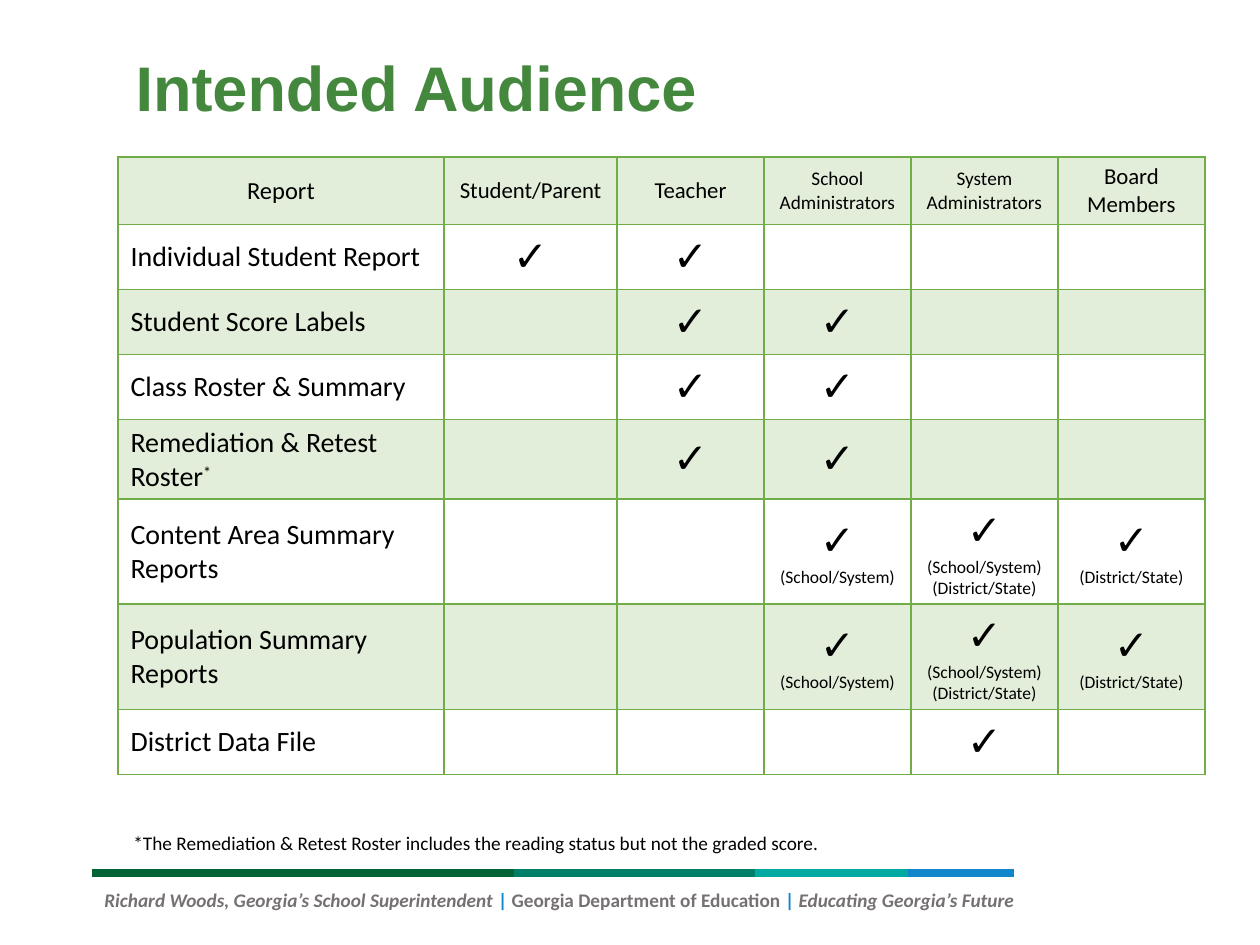
from dataclasses import dataclass

from lxml import etree
from pptx import Presentation
from pptx.dml.color import RGBColor
from pptx.enum.shapes import MSO_SHAPE
from pptx.enum.text import MSO_ANCHOR, MSO_AUTO_SIZE, PP_ALIGN
from pptx.oxml.ns import qn
from pptx.util import Pt

RECTANGLE = MSO_SHAPE.RECTANGLE
MIDDLE = MSO_ANCHOR.MIDDLE
GROW = MSO_AUTO_SIZE.SHAPE_TO_FIT_TEXT
LEFT, CENTER = PP_ALIGN.LEFT, PP_ALIGN.CENTER
EMU_PER_PX = 914400 / 126


@dataclass(frozen=True)
class Theme:
    title_font: str = "Arial"
    body_font: str = "Calibri"
    title_color: str = "44883E"
    text_color: str = "000000"
    grid_color: str = "70AD47"
    footer_color: str = "767171"
    divider_color: str = "1186CA"
    band_opacity: int = 20
    title_size: int = 36
    report_size: int = 16
    check_size: int = 24
    scope_size: int = 10
    small_size: int = 11


THEME = Theme()

BARS = [(422, "006436"), (241, "007E67"), (153, "00A9A1"), (106, "1186CA")]
FOOTER = [
    ("Richard Woods, Georgia’s School Superintendent ", THEME.footer_color, True),
    ("|", THEME.divider_color, False),
    (" Georgia Department of Education ", THEME.footer_color, False),
    ("| ", THEME.divider_color, False),
    ("Educating Georgia’s Future", THEME.footer_color, True),
]
HEADERS = [
    ("Report", 14), ("Student/Parent", 13), ("Teacher", 13),
    ("School Administrators", 11), ("System Administrators", 11),
    ("Board Members", 13),
]
SCHOOL, DISTRICT = "(School/System)", "(District/State)"
SUMMARY_AUDIENCE = {3: [SCHOOL], 4: [SCHOOL, DISTRICT], 5: [DISTRICT]}
# Each report maps its checked columns to the scopes listed under the check.
REPORTS = [
    ("Individual Student Report", {1: [], 2: []}),
    ("Student Score Labels", {2: [], 3: []}),
    ("Class Roster & Summary", {2: [], 3: []}),
    ("Remediation & Retest Roster*", {2: [], 3: []}),
    ("Content Area Summary Reports", SUMMARY_AUDIENCE),
    ("Population Summary Reports", SUMMARY_AUDIENCE),
    ("District Data File", {4: []}),
]
COLUMN_WIDTHS = [326, 173, 147, 147, 147, 147]
HEADER_HEIGHT, REPORT_HEIGHT = 47, 65


def px(length):
    return round(length * EMU_PER_PX)


def emu_box(box):
    return [px(length) for length in box]


def add_span(para, text, size, color=THEME.text_color, name=THEME.body_font, **styles):
    span = para.add_run()
    span.text = text
    for key, value in {"size": Pt(size), "name": name, **styles}.items():
        setattr(span.font, key, value)
    span.font.color.rgb = RGBColor.from_string(color)
    return span


def add_title(page, box):
    title = page.shapes.title
    title.left, title.top, title.width, title.height = emu_box(box)
    title.text_frame.vertical_anchor = MIDDLE
    para = title.text_frame.paragraphs[0]
    para.alignment, para.line_spacing = LEFT, 0.9
    add_span(para, "Intended Audience", THEME.title_size, THEME.title_color,
             THEME.title_font, bold=True)


def add_text_box(page, box):
    """Add a wrapping text box and return its first paragraph."""
    frame = page.shapes.add_textbox(*emu_box(box)).text_frame
    frame.word_wrap = True
    frame.auto_size = GROW
    return frame.paragraphs[0]


def add_footer(page, box):
    left, top, width, height = box
    bar_left = left
    for bar_width, color in BARS:
        bar = page.shapes.add_shape(RECTANGLE, *emu_box((bar_left, top, bar_width, 8)))
        bar.shadow.inherit = False
        bar.fill.solid()
        bar.fill.fore_color.rgb = RGBColor.from_string(color)
        bar.line.fill.background()
        bar_left += bar_width
    para = add_text_box(page, (left, top + 13, width, height - 13))
    for text, color, italic in FOOTER:
        add_span(para, text, THEME.small_size, color, bold=True, italic=italic)


def style_cell(cell, banded):
    """Draw the four borders, then the translucent band or no fill."""
    properties = cell._tc.get_or_add_tcPr()
    for side in ("a:lnL", "a:lnR", "a:lnT", "a:lnB"):
        line = etree.SubElement(properties, qn(side), w=str(Pt(1)))
        fill = etree.SubElement(line, qn("a:solidFill"))
        etree.SubElement(fill, qn("a:srgbClr"), val=THEME.grid_color)
    if banded:
        cell.fill.solid()
        cell.fill.fore_color.rgb = RGBColor.from_string(THEME.grid_color)
        color = properties.find(qn("a:solidFill")).find(qn("a:srgbClr"))
        etree.SubElement(color, qn("a:alpha"), val=str(THEME.band_opacity * 1000))
    else:
        cell.fill.background()
    cell.vertical_anchor = MIDDLE


def fill_report_name(cell, name):
    para = cell.text_frame.paragraphs[0]
    add_span(para, name.rstrip("*"), THEME.report_size)
    if name.endswith("*"):
        star = add_span(para, "*", THEME.report_size)
        star._r.get_or_add_rPr().set("baseline", "30000")


def fill_check(cell, scopes):
    para = cell.text_frame.paragraphs[0]
    para.alignment = CENTER
    add_span(para, "✓", THEME.check_size)
    for scope in scopes:
        para = cell.text_frame.add_paragraph()
        para.alignment = CENTER
        add_span(para, scope, THEME.scope_size)


def add_audience_table(page, box):
    frame = page.shapes.add_table(len(REPORTS) + 1, len(HEADERS), *emu_box(box))
    table = frame.table
    table.first_row = table.horz_banding = False
    for column, width in zip(table.columns, COLUMN_WIDTHS):
        column.width = px(width)
    for index, row in enumerate(table.rows):
        row.height = px(REPORT_HEIGHT if index else HEADER_HEIGHT)
        for cell in row.cells:
            style_cell(cell, banded=index % 2 == 0)
    frame.height = px(box[3])

    for column, (label, size) in enumerate(HEADERS):
        para = table.cell(0, column).text_frame.paragraphs[0]
        para.alignment = CENTER
        add_span(para, label, size)
    for index, (name, audience) in enumerate(REPORTS, start=1):
        fill_report_name(table.cell(index, 0), name)
        for column, scopes in audience.items():
            fill_check(table.cell(index, column), scopes)


def add_footnote(page, box):
    add_span(add_text_box(page, box),
             "*The Remediation & Retest Roster includes the reading status "
             "but not the graded score.", THEME.small_size)


def main():
    deck = Presentation()
    deck.slide_width, deck.slide_height = px(1260), px(945)
    page = deck.slides.add_slide(deck.slide_layouts[5])
    add_footer(page, (92, 869, 1187, 72))
    add_title(page, (123, 0, 1086, 183))
    add_audience_table(page, (118, 157, 1087, 617))
    add_footnote(page, (121, 825, 871, 37))
    deck.save("out.pptx")


if __name__ == "__main__":
    main()
